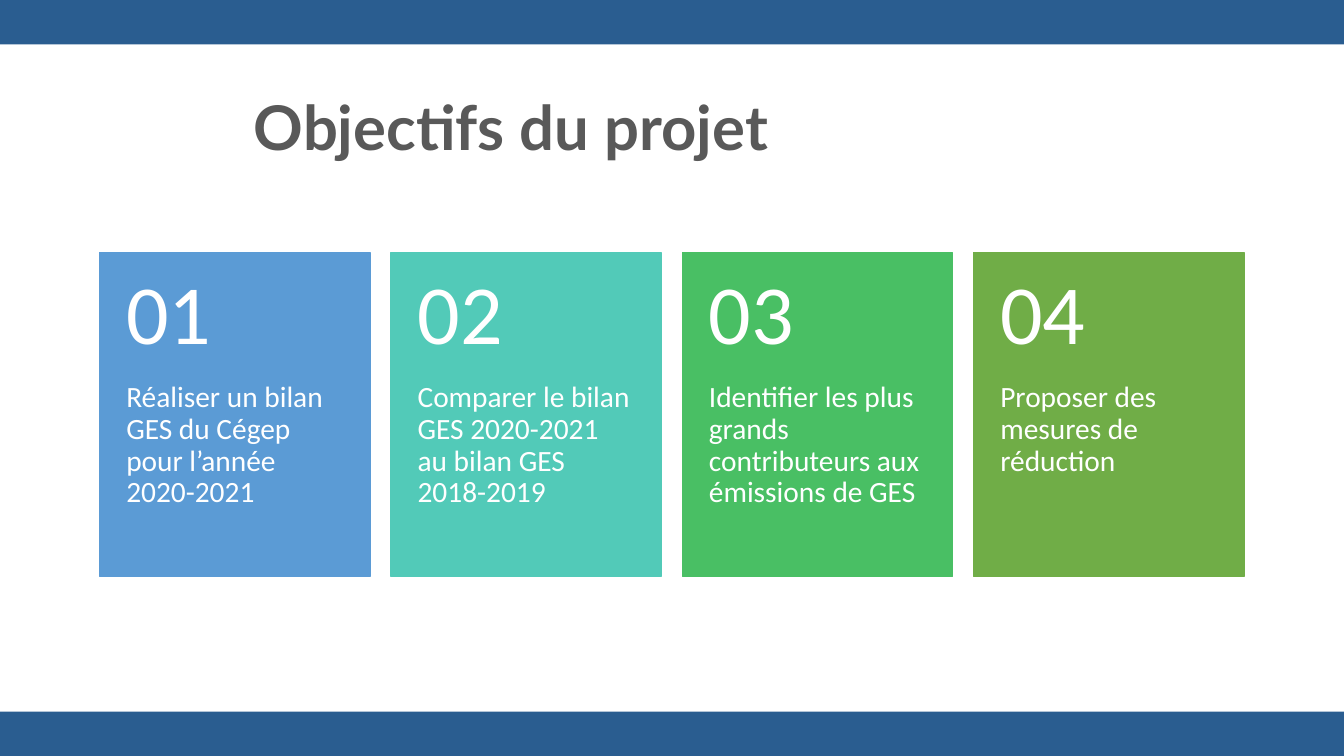
from pptx import Presentation
from pptx.dml.color import RGBColor
from pptx.enum import shapes, text
from pptx.util import Pt

WHITE = RGBColor(0xFF, 0xFF, 0xFF)
GREY = RGBColor(0x59, 0x59, 0x59)
NAVY = RGBColor(0x2A, 0x5D, 0x90)
BLUE = RGBColor(0x5B, 0x9B, 0xD5)
TEAL = RGBColor(0x52, 0xCA, 0xB8)
GREEN = RGBColor(0x49, 0xBF, 0x64)
OLIVE = RGBColor(0x70, 0xAD, 0x47)

SLIDE_W, SLIDE_H, BAND_H = 960, 540, 31.7
CARD_X, CARD_Y, CARD_W, CARD_H, CARD_STEP = 71.2, 180.6, 193, 231.2, 208.1
NUMBER_H = 92.4

OBJECTIVES = [
    (BLUE, "Réaliser un bilan GES du Cégep pour l’année 2020-2021"),
    (TEAL, "Comparer le bilan GES 2020-2021 au bilan GES 2018-2019"),
    (GREEN, "Identifier les plus grands contributeurs aux émissions de GES"),
    (OLIVE, "Proposer des mesures de réduction"),
]


def add_rect(s, x, y, w, h, color, outlined=False):
    sp = s.shapes.add_shape(shapes.MSO_SHAPE.RECTANGLE, Pt(x), Pt(y), Pt(w), Pt(h))
    sp.shadow.inherit = False
    sp.fill.solid()
    sp.fill.fore_color.rgb = color
    if outlined:
        sp.line.color.rgb = color
        sp.line.width = Pt(1)
    else:
        sp.line.fill.background()


def add_text(s, content, x, y, w, h, *, size, color=WHITE, font="Calibri",
             bold=False, anchor=text.MSO_ANCHOR.TOP, insets=(7.2, 3.6, 7.2, 3.6)):
    tf = s.shapes.add_textbox(Pt(x), Pt(y), Pt(w), Pt(h)).text_frame
    tf.word_wrap = True
    tf.vertical_anchor = anchor
    tf.margin_left, tf.margin_top, tf.margin_right, tf.margin_bottom = map(Pt, insets)
    p = tf.paragraphs[0]
    p.line_spacing = 0.9
    r = p.add_run()
    r.text = content
    r.font.size = Pt(size)
    r.font.name = font
    r.font.bold = bold
    r.font.color.rgb = color


def add_card(s, index, color, objective):
    x = CARD_X + index * CARD_STEP
    add_rect(s, x, CARD_Y, CARD_W, CARD_H, color, outlined=True)
    add_text(s, objective, x, CARD_Y + NUMBER_H, CARD_W, CARD_H - NUMBER_H,
             size=21, insets=(19, 0, 19, 26))
    add_text(s, f"{index + 1:02d}", x, CARD_Y, CARD_W, NUMBER_H, size=60,
             anchor=text.MSO_ANCHOR.MIDDLE, insets=(19, 13, 19, 13))


def main():
    prs = Presentation()
    prs.slide_width, prs.slide_height = Pt(SLIDE_W), Pt(SLIDE_H)
    s = prs.slides.add_slide(prs.slide_layouts[6])
    for y in (0, SLIDE_H - BAND_H):
        add_rect(s, 0, y, SLIDE_W, BAND_H, NAVY)
    add_text(s, "Objectifs du projet", 174.2, 36.7, 612, 113, size=44, color=GREY,
             font="Lato", bold=True, anchor=text.MSO_ANCHOR.MIDDLE)
    for index, (color, objective) in enumerate(OBJECTIVES):
        add_card(s, index, color, objective)
    prs.save("out.pptx")


if __name__ == "__main__":
    main()
